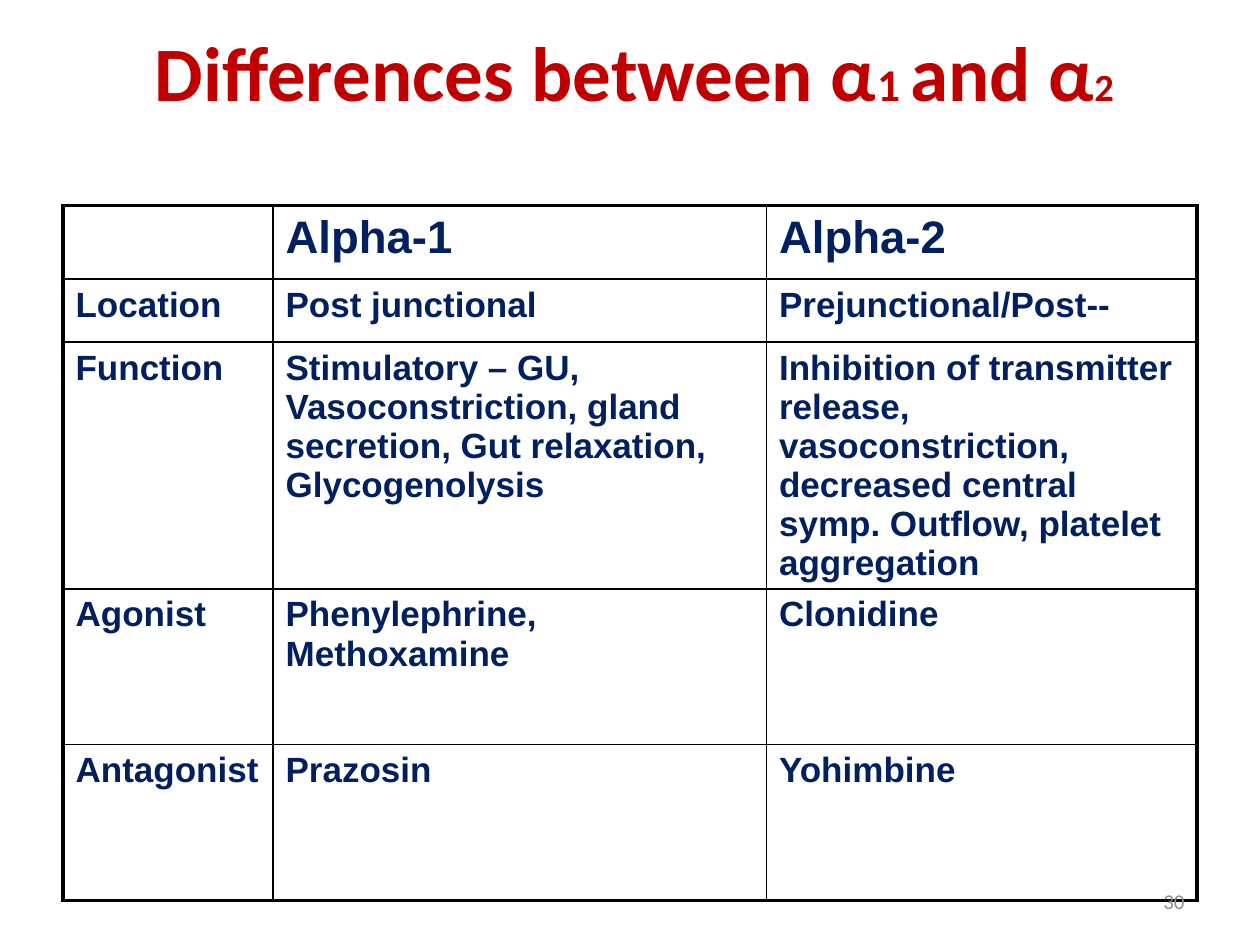
import dataclasses

import lxml.etree
import pptx
import pptx.dml.color
import pptx.enum.text
import pptx.oxml.ns
import pptx.util

Pt = pptx.util.Pt
Color = pptx.dml.color.RGBColor
Align = pptx.enum.text.PP_ALIGN
Anchor = pptx.enum.text.MSO_ANCHOR


@dataclasses.dataclass(frozen=True)
class Theme:
    title_font: str = "Calibri"
    table_font: str = "Arial"
    title_color: Color = Color(0xC0, 0x00, 0x00)
    table_color: Color = Color(0x00, 0x20, 0x60)
    number_color: Color = Color(0x8C, 0x8C, 0x8C)
    border_color: str = "000000"
    title_size: int = 44
    header_size: int = 26
    body_size: int = 20
    number_size: int = 12
    outer_border: float = 2.25
    inner_border: float = 1


THEME = Theme()

# Title text with the type size of each span
TITLE_SPANS = [
    ("Differences between α", THEME.title_size),
    ("1 ", 26),
    ("and α", THEME.title_size),
    ("2", 22),
]

RECEPTOR_ROWS = [
    ("", "Alpha-1", "Alpha-2"),
    ("Location", "Post junctional", "Prejunctional/Post--"),
    ("Function",
     "Stimulatory – GU, Vasoconstriction, gland secretion, Gut relaxation, Glycogenolysis",
     "Inhibition of transmitter release, vasoconstriction, decreased central symp. "
     "Outflow, platelet aggregation"),
    ("Agonist", "Phenylephrine, Methoxamine", "Clonidine"),
    ("Antagonist", "Prazosin", "Yohimbine"),
]
COLUMN_WIDTHS = [120, 282, 246]
ROW_HEIGHTS = [42, 36, 141, 89, 89]


def style_span(span, font, size, color, bold=False):
    span.font.name = font
    span.font.size = Pt(size)
    span.font.color.rgb = color
    span.font.bold = bold


def place(shape, box):
    shape.left, shape.top, shape.width, shape.height = (Pt(length) for length in box)


def add_title(page, box):
    title = page.shapes.title
    place(title, box)
    frame = title.text_frame
    frame.auto_size = pptx.enum.text.MSO_AUTO_SIZE.NONE
    frame.vertical_anchor = Anchor.MIDDLE
    para = frame.paragraphs[0]
    para.alignment = Align.CENTER
    for text, size in TITLE_SPANS:
        span = para.add_run()
        span.text = text
        style_span(span, THEME.title_font, size, THEME.title_color, bold=True)


def set_borders(cell, widths):
    """Draw the left, right, top and bottom borders, which precede the fill."""
    properties = cell._tc.get_or_add_tcPr()
    for position, (side, width) in enumerate(widths.items()):
        line = lxml.etree.Element(pptx.oxml.ns.qn("a:" + side), w=str(int(Pt(width))))
        fill = lxml.etree.SubElement(line, pptx.oxml.ns.qn("a:solidFill"))
        lxml.etree.SubElement(fill, pptx.oxml.ns.qn("a:srgbClr"), val=THEME.border_color)
        properties.insert(position, line)


def add_receptor_table(page, box):
    row_count, column_count = len(ROW_HEIGHTS), len(COLUMN_WIDTHS)
    left, top, width, height = (Pt(length) for length in box)
    table = page.shapes.add_table(
        row_count, column_count, left, top, width, height).table
    table.first_row = table.horz_banding = False
    for column, column_width in zip(table.columns, COLUMN_WIDTHS):
        column.width = Pt(column_width)

    for r, texts in enumerate(RECEPTOR_ROWS):
        table.rows[r].height = Pt(ROW_HEIGHTS[r])
        size = THEME.header_size if r == 0 else THEME.body_size
        for c, text in enumerate(texts):
            cell = table.cell(r, c)
            cell.fill.background()
            # The outer frame is heavier than the inner grid
            on_edge = {"lnL": c == 0, "lnR": c == column_count - 1,
                       "lnT": r == 0, "lnB": r == row_count - 1}
            set_borders(cell, {
                side: THEME.outer_border if edge else THEME.inner_border
                for side, edge in on_edge.items()})
            if text:
                cell.text_frame.text = text
                span = cell.text_frame.paragraphs[0].runs[0]
                style_span(span, THEME.table_font, size, THEME.table_color, bold=True)


def add_page_number(page, box, number):
    frame = page.shapes.add_textbox(*(Pt(length) for length in box)).text_frame
    frame.word_wrap = True
    frame.vertical_anchor = Anchor.MIDDLE
    frame.text = number
    para = frame.paragraphs[0]
    para.alignment = Align.RIGHT
    style_span(para.runs[0], THEME.title_font, THEME.number_size, THEME.number_color)


def main():
    deck = pptx.Presentation()
    deck.slide_width, deck.slide_height = Pt(720), Pt(540)
    page = deck.slides.add_slide(deck.slide_layouts.get_by_name("Title Only"))
    add_title(page, (36, 9.5, 653, 62))
    add_receptor_table(page, (36, 117.5, sum(COLUMN_WIDTHS), sum(ROW_HEIGHTS)))
    add_page_number(page, (516, 500.5, 168, 28.75), "30")
    deck.save("out.pptx")


if __name__ == "__main__":
    main()
